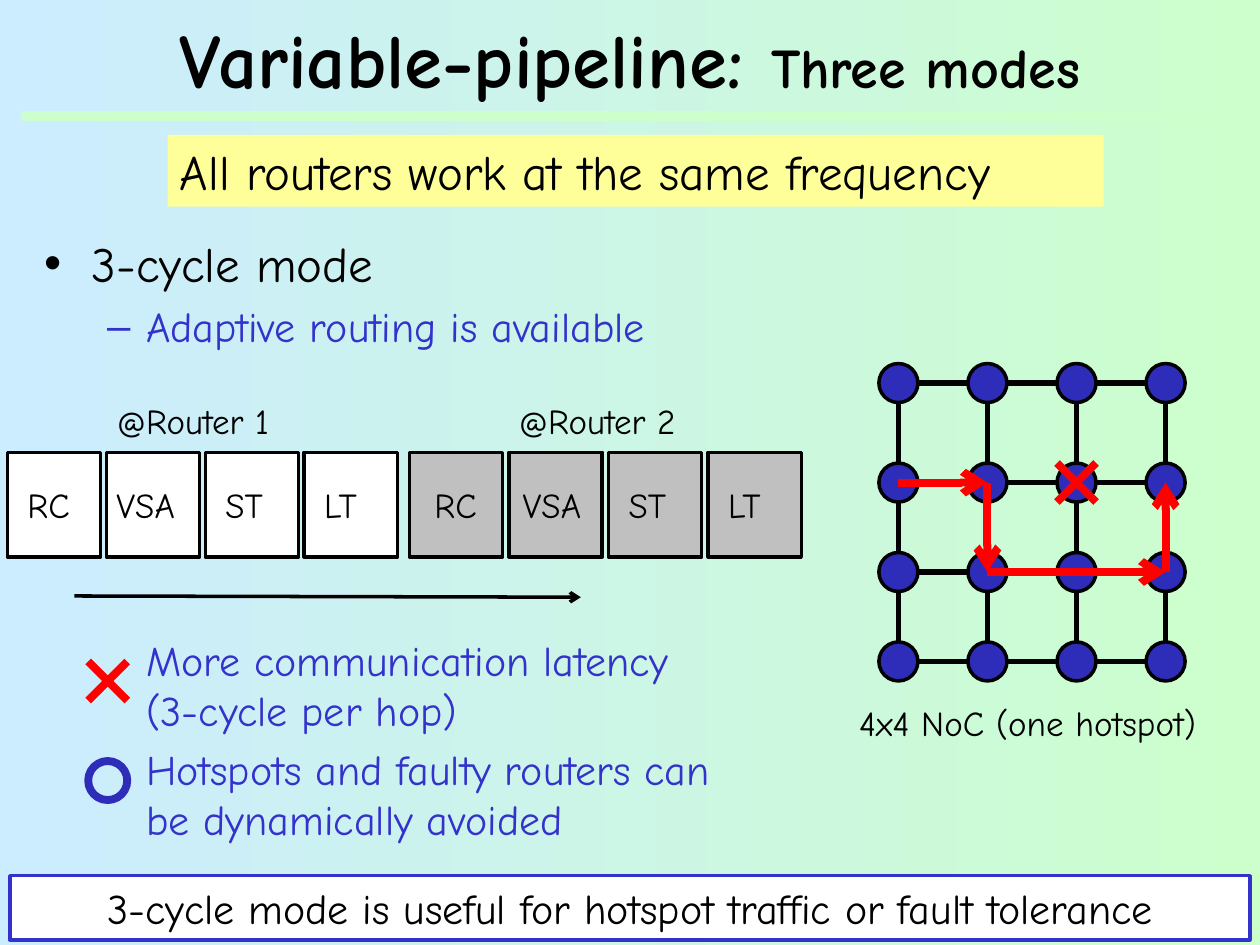
from lxml import etree
from pptx import Presentation
from pptx.dml.color import RGBColor
from pptx.enum.shapes import MSO_CONNECTOR, MSO_SHAPE
from pptx.enum.text import MSO_ANCHOR, MSO_AUTO_SIZE, PP_ALIGN
from pptx.oxml.ns import qn
from pptx.util import Inches, Pt

RECT, OVAL = MSO_SHAPE.RECTANGLE, MSO_SHAPE.OVAL
STRAIGHT = MSO_CONNECTOR.STRAIGHT
LEFT, CENTER = PP_ALIGN.LEFT, PP_ALIGN.CENTER
MIDDLE, TOP = MSO_ANCHOR.MIDDLE, MSO_ANCHOR.TOP
FIXED, GROW = MSO_AUTO_SIZE.NONE, MSO_AUTO_SIZE.SHAPE_TO_FIT_TEXT

BLACK = RGBColor(0x00, 0x00, 0x00)
WHITE = RGBColor(0xFF, 0xFF, 0xFF)
GRAY = RGBColor(0xC0, 0xC0, 0xC0)
RED = RGBColor(0xFF, 0x00, 0x00)
BLUE = RGBColor(0x33, 0x33, 0xCC)
NAVY = RGBColor(0x2D, 0x2D, 0xB9)
YELLOW = RGBColor(0xFF, 0xFF, 0x99)
SKY = RGBColor(0xCC, 0xEC, 0xFF)
MINT = RGBColor(0xCC, 0xFF, 0xCC)


class Board:
    font = "Comic Neue"
    cols, rows = 100, 75

    def __init__(self, deck):
        self.slide = deck.slides.add_slide(deck.slide_layouts[1])
        self.shapes = self.slide.shapes
        self.col = deck.slide_width / self.cols
        self.row = deck.slide_height / self.rows

    def spot(self, x, y):
        return round(x * self.col), round(y * self.row)

    def back(self, start, end):
        fill = self.slide.background.fill
        fill.gradient()
        fill.gradient_angle = 0
        for stop, color, place in zip(fill.gradient_stops, (start, end), (0, 1)):
            stop.color.rgb = color
            stop.position = place

    def style(self, run, size, color=BLACK, bold=False):
        run.font.name = self.font
        run.font.size = Pt(size)
        run.font.bold = bold
        run.font.color.rgb = color

    def place(self, item, x, y, w, h):
        item.left, item.top = self.spot(x, y)
        item.width, item.height = self.spot(w, h)

    def title(self, area, parts):
        head = self.shapes.title
        self.place(head, *area)
        frame = head.text_frame
        frame.auto_size = FIXED
        frame.vertical_anchor = MIDDLE
        para = frame.paragraphs[0]
        para.alignment = CENTER
        for text, size in parts:
            run = para.add_run()
            run.text = text
            self.style(run, size, bold=True)

    def body(self, area, items):
        hold = self.slide.placeholders[1]
        self.place(hold, *area)
        frame = hold.text_frame
        frame.text = "\n".join(item[0] for item in items)
        frame.auto_size = FIXED
        frame.vertical_anchor = TOP
        for para, (_, level, gap, mark) in zip(frame.paragraphs, items):
            para.level = level
            para.space_before = Pt(gap)
            margin, hang = ((0.38, -0.38), (0.81, -0.31))[level]
            props = para._p.get_or_add_pPr()
            props.set("marL", str(Inches(margin)))
            props.set("indent", str(Inches(hang if mark else 0)))
            if not mark:
                etree.SubElement(props, qn("a:buNone"))
            self.style(para.runs[0], (28, 24)[level], (BLACK, BLUE)[level])

    def shape(self, kind, area, fill=None, line=None, width=2):
        x, y, w, h = area
        item = self.shapes.add_shape(kind, *self.spot(x, y), *self.spot(w, h))
        item.shadow.inherit = False
        if fill is None:
            item.fill.background()
        else:
            item.fill.solid()
            item.fill.fore_color.rgb = fill
        if line is None:
            item.line.fill.background()
        else:
            item.line.color.rgb = line
            item.line.width = Pt(width)
        return item

    def panel(self, area, text, size, fill, line=None, align=LEFT):
        frame = self.shape(RECT, area, fill, line).text_frame
        frame.word_wrap = True
        frame.vertical_anchor = MIDDLE
        frame.text = text
        frame.paragraphs[0].alignment = align
        self.style(frame.paragraphs[0].runs[0], size)

    def label(self, x, y, w, text):
        box = self.shapes.add_textbox(*self.spot(x, y), *self.spot(w, 4.4))
        frame = box.text_frame
        frame.text = text
        frame.word_wrap = False
        frame.auto_size = GROW
        self.style(frame.paragraphs[0].runs[0], 20)

    def line(self, start, end, color=BLACK, width=3, arrow=False):
        link = self.shapes.add_connector(STRAIGHT, *self.spot(*start), *self.spot(*end))
        link.line.color.rgb = color
        link.line.width = Pt(width)
        props = link._element.spPr
        if arrow:
            etree.SubElement(props.find(qn("a:ln")), qn("a:tailEnd"), type="arrow")
        etree.SubElement(props, qn("a:effectLst"))

    def cross(self, x, y, size):
        self.line((x, y + size), (x + size, y), RED, 4.5)
        self.line((x + size, y + size), (x, y), RED, 4.5)

    def stages(self, start, step, fill, names):
        for i, (name, shift, width) in enumerate(names):
            x = start + i * step
            self.shape(RECT, (x, 35.9, 7.4, 8.3), fill, BLACK)
            self.label(x + shift, 37.9, width, name)

    def mesh(self, xs, ys, size):
        half = size / 2
        for x in xs:
            self.line((x, ys[0] + half), (x, ys[-1] - half))
        for y in ys:
            self.line((xs[0] + half, y), (xs[-1] - half, y))
        for y in ys:
            for x in xs:
                self.shape(OVAL, (x - half, y - half, size, size), NAVY, BLACK)


def main():
    deck = Presentation()
    deck.slide_width, deck.slide_height = Inches(10), Inches(7.5)
    board = Board(deck)
    board.back(SKY, MINT)
    board.line((1.7, 9.2), (99.2, 9.2), MINT, 6)
    board.title((2.5, 0.8, 95, 7.5), [("Variable-pipeline: ", 44), ("Three modes", 32)])
    board.body((2.5, 18, 55.4, 53.7), [
        ("3-cycle mode", 0, 5.6, True),
        ("Adaptive routing is available", 1, 4.8, True),
        ("More communication latency (3-cycle per hop)", 1, 162, False),
        ("Hotspots and faulty routers can be dynamically avoided", 1, 4.8, False),
    ])
    board.cross(7, 52.5, 3.1)
    board.shape(OVAL, (7, 60.4, 3.1, 3.1), line=NAVY, width=4.5)

    tail = [("ST", 0.6, 5.8), ("LT", 0.6, 5.4)]
    board.stages(0.6, 7.85, WHITE, [("RC", 0.6, 5.4), ("VSA", -0.2, 7.8)] + tail)
    board.stages(32.5, 7.9, GRAY, [("RC", 1, 5.4), ("VSA", 0.1, 7.8)] + tail)
    board.label(8.3, 31.2, 15.6, "@Router 1")
    board.label(40.2, 31.2, 16.1, "@Router 2")
    board.line((5.9, 47.3), (46.1, 47.4), width=2, arrow=True)

    xs = [71.3 + 7.07 * i for i in range(4)]
    ys = [30.4, 38.3, 45.4, 52.5]
    board.mesh(xs, ys, 3.1)
    board.label(67.2, 55.2, 31.6, "4x4 NoC (one hotspot)")
    board.cross(xs[2] - 1.55, ys[1] - 1.55, 3.1)
    route = [(0, 1), (1, 1), (1, 2), (3, 2), (3, 1)]
    stops = [(xs[i], ys[j]) for i, j in route]
    for start, end in zip(stops, stops[1:]):
        board.line(start, end, RED, 4.5, arrow=True)

    board.panel((0.8, 69.5, 98.4, 5.1),
                "3-cycle mode is useful for hotspot traffic or fault tolerance",
                24, WHITE, BLUE, CENTER)
    board.panel((13.3, 10.7, 74.3, 5.7), "All routers work at the same frequency", 28, YELLOW)
    deck.save("out.pptx")


if __name__ == "__main__":
    main()
